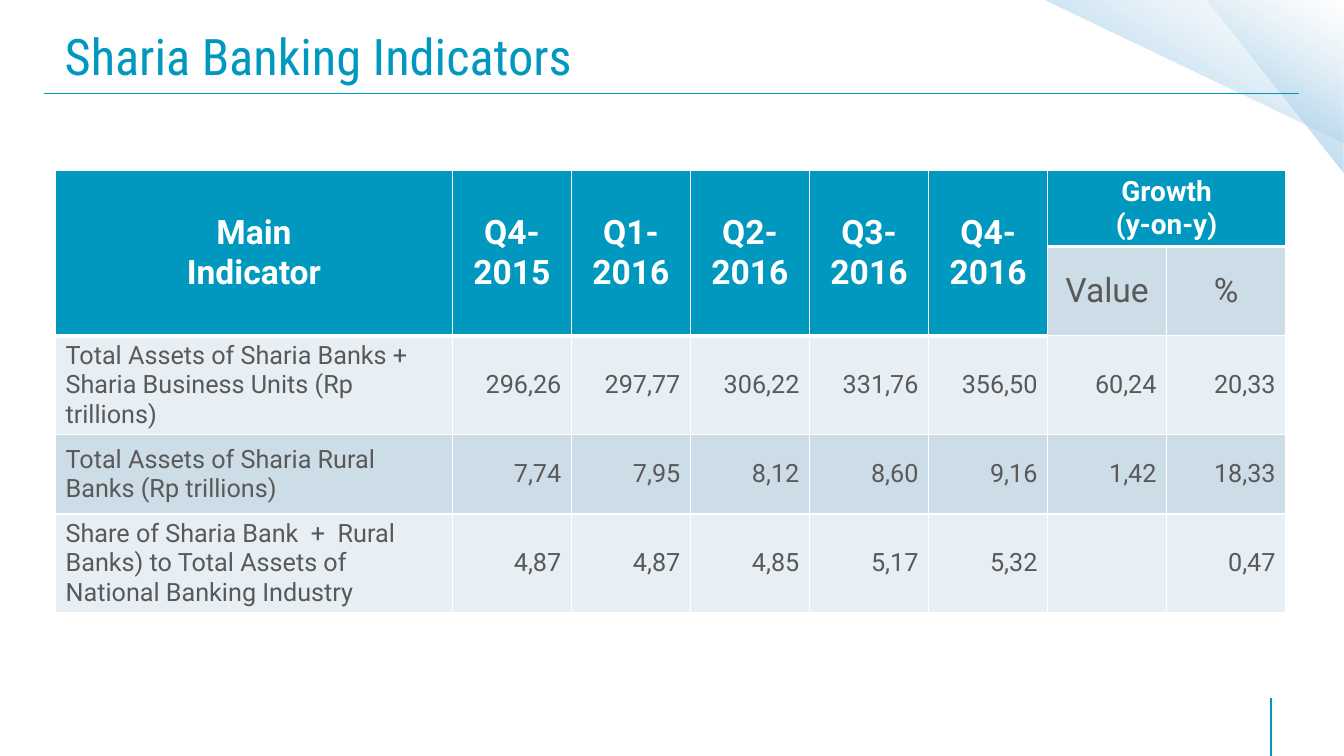
import pptx
import pptx.util
import pptx.dml.color
import pptx.enum.shapes
import pptx.enum.text
import pptx.oxml
import pptx.oxml.ns
import lxml.etree

Cm = pptx.util.Cm
Pt = pptx.util.Pt
RGBColor = pptx.dml.color.RGBColor
ALIGN = pptx.enum.text.PP_ALIGN
MIDDLE = pptx.enum.text.MSO_ANCHOR.MIDDLE

TEAL = RGBColor(0x00, 0x98, 0xBF)
WHITE = RGBColor(0xFF, 0xFF, 0xFF)
GREY = RGBColor(0x59, 0x59, 0x59)
BAND_DARK = RGBColor(0xCC, 0xDD, 0xE8)
BAND_LIGHT = RGBColor(0xE7, 0xEF, 0xF4)
# Position, colour and opacity, all in percent
GRADIENT_STOPS = [
    (0, RGBColor(0x8F, 0xC8, 0xE8), 100),
    (50, RGBColor(0xA4, 0xCE, 0xE9), 44),
    (100, RGBColor(0xDE, 0xED, 0xF6), 0),
]
NAMESPACE = pptx.oxml.ns.nsdecls("a")


def fill_cell(cell, lines, size, color, align, fill, bold=False):
    cell.fill.solid()
    cell.fill.fore_color.rgb = fill
    cell.vertical_anchor = MIDDLE
    cell.text = "\n".join(lines)
    for para in cell.text_frame.paragraphs:
        para.alignment = align
        para.font.name = "Roboto"
        para.font.size = Pt(size)
        para.font.bold = bold
        para.font.color.rgb = color


def add_borders(cell, bottom_width):
    properties = cell._tc.get_or_add_tcPr()
    widths = [("L", 1), ("R", 1), ("T", 1), ("B", bottom_width)]
    for position, (side, width) in enumerate(widths):
        border = pptx.oxml.parse_xml(
            f'<a:ln{side} {NAMESPACE} w="{Pt(width)}"><a:solidFill>'
            f'<a:srgbClr val="{WHITE}"/></a:solidFill></a:ln{side}>')
        properties.insert(position, border)


deck = pptx.Presentation()
deck.slide_width = Cm(33.87)
deck.slide_height = Cm(19.05)
page = deck.slides.add_slide(deck.slide_layouts[5])

# Translucent corner triangles
for left, width, height in [(30.4, 3.46, 4.34), (26.31, 7.59, 3.61)]:
    triangle = page.shapes.add_shape(
        pptx.enum.shapes.MSO_SHAPE.RIGHT_TRIANGLE,
        Cm(left), Cm(0), Cm(width), Cm(height))
    triangle.rotation = 180
    triangle.shadow.inherit = False
    triangle.line.fill.background()
    triangle.fill.gradient()
    triangle.fill.gradient_angle = 240
    stops = triangle._element.spPr.find(".//" + pptx.oxml.ns.qn("a:gsLst"))
    for stop in list(stops):
        stops.remove(stop)
    for position, color, opacity in GRADIENT_STOPS:
        stops.append(pptx.oxml.parse_xml(
            f'<a:gs {NAMESPACE} pos="{position * 1000}"><a:srgbClr val="{color}">'
            f'<a:alpha val="{opacity * 1000}"/></a:srgbClr></a:gs>'))

# Rules under the title and at the bottom right
for x1, y1, x2, y2 in [(1.12, 2.36, 32.74, 2.36), (32.03, 19.05, 32.03, 17.6)]:
    rule = page.shapes.add_connector(
        pptx.enum.shapes.MSO_CONNECTOR.STRAIGHT, Cm(x1), Cm(y1), Cm(x2), Cm(y2))
    rule.line.color.rgb = TEAL
    rule.line.width = Pt(1)
    lxml.etree.SubElement(rule._element.spPr, pptx.oxml.ns.qn("a:effectLst"))

# Title
title = page.shapes.title
title.left, title.top, title.width, title.height = Cm(1.17), Cm(0.36), Cm(31.01), Cm(2.08)
frame = title.text_frame
frame.text = "Sharia Banking Indicators"
frame.word_wrap = True
frame.auto_size = pptx.enum.text.MSO_AUTO_SIZE.NONE
frame.vertical_anchor = MIDDLE
frame.margin_left = frame.margin_right = Cm(0.46)
frame.margin_top = frame.margin_bottom = Cm(0.23)
para = frame.paragraphs[0]
para.alignment = ALIGN.LEFT
para.font.name = "Roboto Condensed"
para.font.size = Pt(36)
para.font.color.rgb = TEAL

# Indicator table
column_widths = [10] + [3] * 7
row_heights = [1.9, 2.24, 2.48, 2, 2.48]
table = page.shapes.add_table(
    len(row_heights), len(column_widths), Cm(1.4), Cm(4.3),
    Cm(sum(column_widths)), Cm(sum(row_heights))).table
for column, width in zip(table.columns, column_widths):
    column.width = Cm(width)
for row, height in zip(table.rows, row_heights):
    row.height = Cm(height)

# Header rows
headers = [["Main", "Indicator"], ["Q4-2015"], ["Q1-2016"], ["Q2-2016"],
           ["Q3-2016"], ["Q4-2016"]]
for index, lines in enumerate(headers):
    table.cell(0, index).merge(table.cell(1, index))
    fill_cell(table.cell(0, index), lines, 24, WHITE, ALIGN.CENTER, TEAL, True)
table.cell(0, 6).merge(table.cell(0, 7))
fill_cell(table.cell(0, 6), ["Growth", "(y-on-y)"], 20, WHITE, ALIGN.CENTER, TEAL, True)
for index, label in enumerate(["Value", "%"], start=6):
    fill_cell(table.cell(1, index), [label], 24, GREY, ALIGN.CENTER, BAND_DARK)

# Data rows
indicators = [
    ("Total Assets of Sharia Banks + Sharia Business Units (Rp trillions)",
     "296,26", "297,77", "306,22", "331,76", "356,50", "60,24", "20,33"),
    ("Total Assets of Sharia Rural Banks (Rp trillions)",
     "7,74", "7,95", "8,12", "8,60", "9,16", "1,42", "18,33"),
    ("Share of Sharia Bank  +  Rural Banks) to Total Assets of National Banking Industry",
     "4,87", "4,87", "4,85", "5,17", "5,32", "", "0,47"),
]
for row_index, values in enumerate(indicators, start=2):
    band = BAND_DARK if row_index % 2 else BAND_LIGHT
    for index, value in enumerate(values):
        align = ALIGN.RIGHT if index else ALIGN.LEFT
        fill_cell(table.cell(row_index, index), [value], 18, GREY, align, band)

# White cell borders, thicker below the teal header
for row_index in range(len(row_heights)):
    for index in range(len(column_widths)):
        under_header = row_index == 0 or (row_index == 1 and index < len(headers))
        add_borders(table.cell(row_index, index), 3 if under_header else 1)

deck.save("out.pptx")
